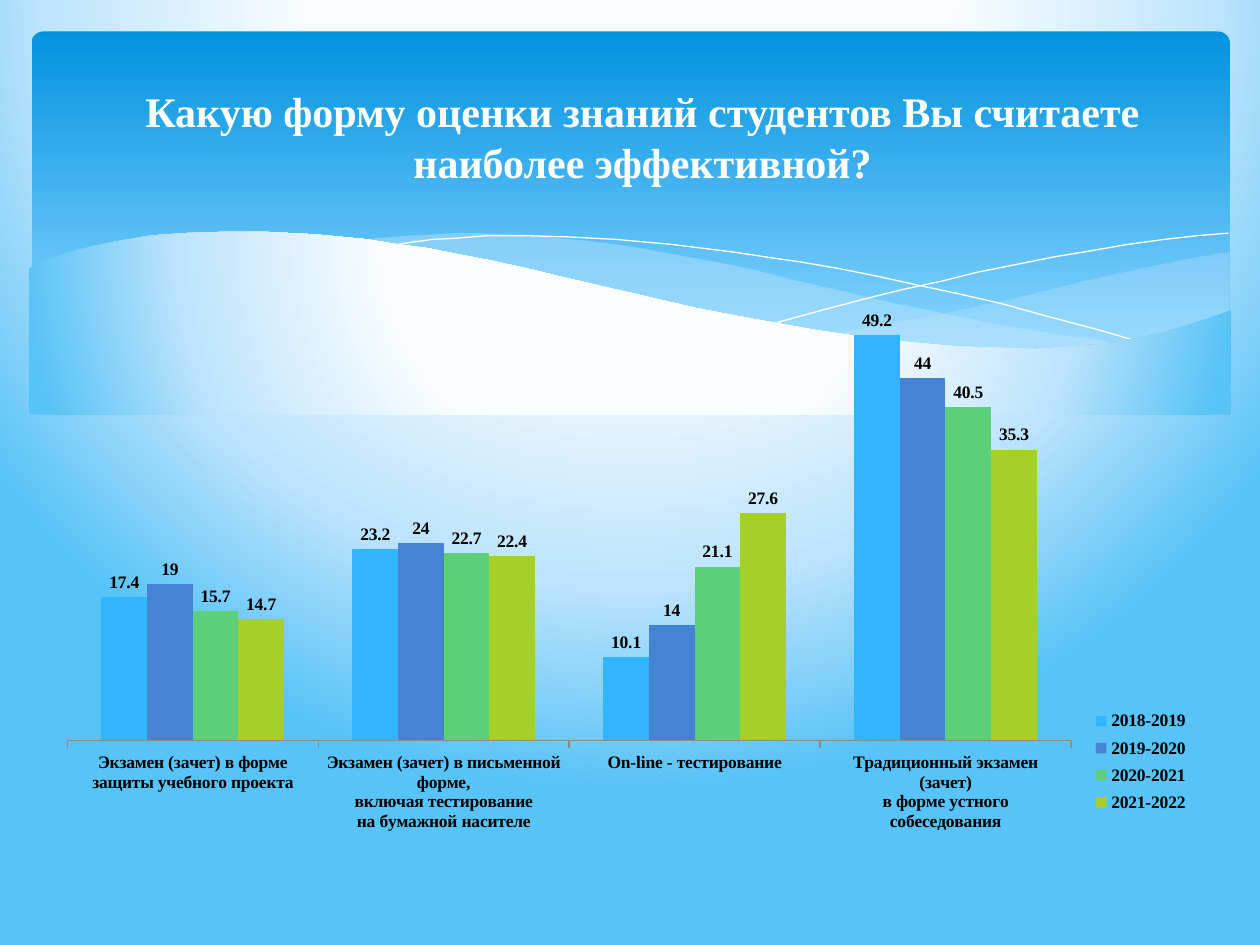
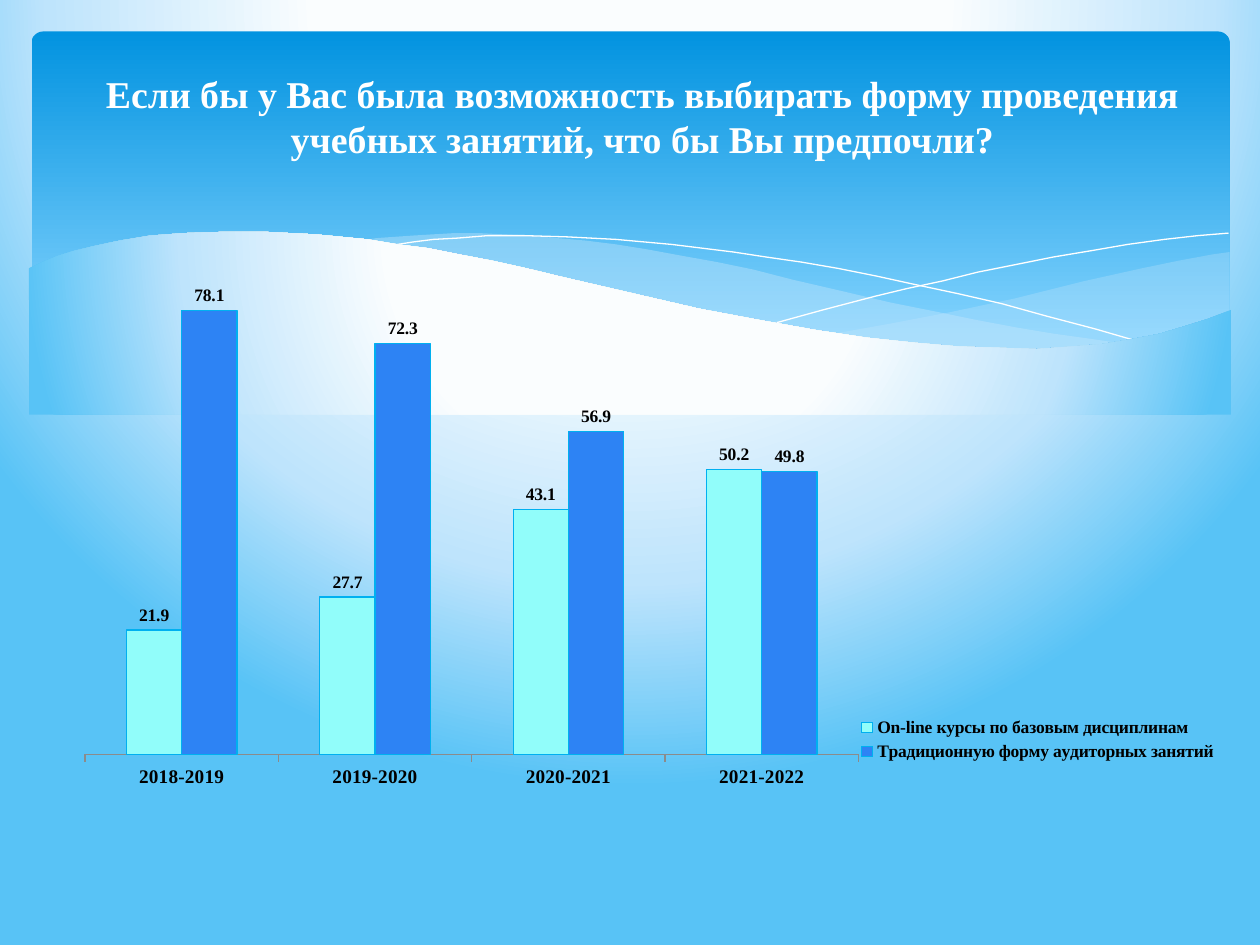
from pptx import Presentation
from pptx.chart.data import CategoryChartData
from pptx.dml.color import RGBColor
from pptx.enum.chart import XL_CHART_TYPE, XL_LABEL_POSITION, XL_LEGEND_POSITION, XL_TICK_MARK
from pptx.enum.shapes import MSO_SHAPE
from pptx.enum.text import MSO_ANCHOR, MSO_AUTO_SIZE, PP_ALIGN
from pptx.oxml import parse_xml
from pptx.oxml.ns import nsdecls, qn
from pptx.util import Inches, Pt

COLUMNS = XL_CHART_TYPE.COLUMN_CLUSTERED
ABOVE_BAR = XL_LABEL_POSITION.OUTSIDE_END
LEGEND_RIGHT = XL_LEGEND_POSITION.RIGHT
TICK_OUTSIDE = XL_TICK_MARK.OUTSIDE
ROUNDED = MSO_SHAPE.ROUNDED_RECTANGLE
MIDDLE = MSO_ANCHOR.MIDDLE
CENTER = PP_ALIGN.CENTER
NO_AUTOFIT = MSO_AUTO_SIZE.NONE

FONT = "Times New Roman"
WHITE = RGBColor(0xFF, 0xFF, 0xFF)
BLACK = RGBColor(0x00, 0x00, 0x00)
AXIS_GRAY = RGBColor(0x8B, 0x8B, 0x8B)
VEIL_BLUE = RGBColor(0xC6, 0xE7, 0xFC)
OUTLINE_BLUE = RGBColor(0x00, 0xB0, 0xF0)
SKY_BLUE = RGBColor(0x31, 0xB6, 0xFD)
ROYAL_BLUE = RGBColor(0x45, 0x84, 0xD3)
GREEN = RGBColor(0x5B, 0xD0, 0x78)
LIME = RGBColor(0xA5, 0xD0, 0x28)
AQUA = RGBColor(0x91, 0xFD, 0xFA)
BRIGHT_BLUE = RGBColor(0x2D, 0x83, 0xF4)
GLOW_STOPS = [(40, RGBColor(0xFA, 0xFD, 0xFE)), (74, RGBColor(0xBE, 0xE4, 0xFC)),
              (100, RGBColor(0x58, 0xC3, 0xF6))]
BAND_STOPS = [(0, RGBColor(0x02, 0x93, 0xE0)), (90, RGBColor(0x83, 0xD3, 0xFE))]

GLOW = ('<a:path {} path="circle"><a:fillToRect l="20000" t="-40000" r="20000" b="140000"/>'
        '</a:path>')
DOWNWARD = '<a:lin {} ang="5400000" scaled="0"/>'

# Outlines in inches from the top left corner of the page
RIGHT_VEIL = [
    (9.76, 2), (9.62, 2.02), (9.35, 2.07), (9.06, 2.13), (8.61, 2.23), (8.05, 2.37),
    (7.53, 2.48), (7.06, 2.57), (6.61, 2.65), (6.91, 2.69), (7.19, 2.72), (7.45, 2.75),
    (7.69, 2.77), (8.03, 2.78), (8.35, 2.77), (8.63, 2.75), (8.89, 2.72), (9.13, 2.67),
    (9.35, 2.62), (9.49, 2.57), (9.63, 2.52), (9.76, 2.47)]
MIDDLE_VEIL = [
    (8.93, 2.73), (8.66, 2.69), (8.37, 2.65), (8.07, 2.6), (7.75, 2.54), (7.41, 2.47),
    (7.06, 2.4), (6.68, 2.31), (6.29, 2.22), (5.98, 2.14), (5.69, 2.08), (5.41, 2.03),
    (5.14, 1.98), (4.89, 1.94), (4.65, 1.91), (4.42, 1.89), (4.2, 1.87), (3.99, 1.86),
    (3.8, 1.85), (3.61, 1.85), (3.28, 1.87), (2.99, 1.89), (2.86, 1.91), (3.23, 1.96),
    (3.62, 2.03), (4.04, 2.11), (4.49, 2.22), (4.91, 2.32), (5.3, 2.4), (5.66, 2.48),
    (6.01, 2.55), (6.34, 2.61), (6.65, 2.66), (6.95, 2.7), (7.22, 2.74), (7.48, 2.76),
    (7.73, 2.77), (7.96, 2.78), (8.28, 2.78), (8.57, 2.77), (8.76, 2.75)]
FALLING_LINE = [
    (3.09, 1.95), (3.28, 1.92), (3.44, 1.9), (3.63, 1.89), (3.87, 1.87), (4.16, 1.87),
    (4.5, 1.88), (4.89, 1.9), (5.33, 1.94), (5.82, 2), (6.08, 2.04), (6.36, 2.08),
    (6.65, 2.13), (6.95, 2.19), (7.27, 2.26), (7.6, 2.33), (7.95, 2.41), (8.31, 2.51),
    (8.69, 2.61), (9.07, 2.72)]
RISING_LINE = [
    (6.13, 2.57), (6.53, 2.46), (6.95, 2.35), (7.2, 2.29), (7.48, 2.23), (7.76, 2.16),
    (8.06, 2.1), (8.36, 2.04), (8.66, 1.99), (8.95, 1.94), (9.24, 1.9), (9.51, 1.87),
    (9.75, 1.85)]
WAVE = [
    (9.77, 2.46), (9.59, 2.53), (9.4, 2.59), (9.2, 2.65), (8.99, 2.69), (8.75, 2.73),
    (8.5, 2.75), (8.23, 2.77), (7.93, 2.76), (7.61, 2.75), (7.26, 2.72), (6.88, 2.68),
    (6.48, 2.62), (6.03, 2.54), (5.55, 2.45), (5.03, 2.33), (4.47, 2.2), (4.18, 2.13),
    (3.91, 2.07), (3.65, 2.02), (3.4, 1.97), (3.16, 1.94), (2.92, 1.9), (2.71, 1.88),
    (2.5, 1.86), (2.3, 1.85), (2.11, 1.84), (1.77, 1.84), (1.46, 1.85), (1.19, 1.87),
    (0.95, 1.91), (0.76, 1.95), (0.59, 1.99), (0.46, 2.03), (0.36, 2.07), (0.23, 2.13),
    (0.23, 3.29), (9.77, 3.29)]


def inches(*lengths):
    return [Inches(length) for length in lengths]


def apply_gradient(fill, owner, stops, direction):
    """Give the first gradient inside owner the stops and the direction XML."""
    fill.gradient()
    gradient = owner.find(".//" + qn("a:gradFill"))
    for child in list(gradient):
        gradient.remove(child)
    marks = "".join(f'<a:gs pos="{percent * 1000}"><a:srgbClr val="{color}"/></a:gs>'
                    for percent, color in stops)
    gradient.append(parse_xml(f'<a:gsLst {nsdecls("a")}>{marks}</a:gsLst>'))
    gradient.append(parse_xml(direction.format(nsdecls("a"))))


def add_outline(page, points, close):
    first, *others = [tuple(inches(*point)) for point in points]
    builder = page.shapes.build_freeform(*first, scale=1.0)
    builder.add_line_segments(others, close=close)
    outline = builder.convert_to_shape()
    outline.shadow.inherit = False
    return outline


def add_veil(page, points, opacity):
    veil = add_outline(page, points, close=True)
    veil.fill.solid()
    veil.fill.fore_color.rgb = VEIL_BLUE
    veil.line.fill.background()
    color = veil.element.find(".//" + qn("a:srgbClr"))
    color.append(parse_xml(f'<a:alpha {nsdecls("a")} val="{opacity * 1000}"/>'))
    return veil


def add_hairline(page, points):
    hairline = add_outline(page, points, close=False)
    hairline.fill.background()
    hairline.line.color.rgb = WHITE
    hairline.line.width = Pt(0)
    return hairline


def add_band(page):
    band = page.shapes.add_shape(ROUNDED, *inches(0.25, 0.25, 9.51, 2.7))
    band.adjustments[0] = 0.034
    band.shadow.inherit = False
    apply_gradient(band.fill, band.element, BAND_STOPS, DOWNWARD)
    band.line.fill.background()
    return band


def add_wave(page):
    wave = add_outline(page, WAVE, close=True)
    apply_gradient(wave.fill, wave.element, GLOW_STOPS, GLOW)
    wave.line.fill.background()
    return wave


def decorate_layout(layout, page):
    """Draw the shared scenery on page, then hand it to the layout behind its placeholders."""
    apply_gradient(layout.background.fill, layout.element, GLOW_STOPS, GLOW)
    scenery = [add_band(page), add_veil(page, RIGHT_VEIL, 29), add_veil(page, MIDDLE_VEIL, 40),
               add_hairline(page, FALLING_LINE), add_hairline(page, RISING_LINE),
               add_wave(page)]
    for depth, shape in enumerate(scenery, start=2):
        layout.shapes.element.insert(depth, shape.element)


def set_title(page, text, top, size):
    title = page.shapes.title
    title.left, title.top, title.width, title.height = inches(0.35, top, 9.5, 1.12)
    frame = title.text_frame
    frame.text = text
    frame.word_wrap = True
    frame.auto_size = NO_AUTOFIT
    frame.vertical_anchor = MIDDLE
    para = frame.paragraphs[0]
    para.alignment = CENTER
    set_font(para.runs[0].font, size, WHITE)


def set_font(font, size, color=BLACK):
    font.name = FONT
    font.size = Pt(size)
    font.bold = True
    font.color.rgb = color


def place_part(part, index, box, inner=False):
    """Fix a chart part at box, given as fractions of the chart's size."""
    for old in part.findall(qn("c:layout")):
        part.remove(old)
    target = '<c:layoutTarget val="inner"/>' if inner else ""
    modes = '<c:xMode val="edge"/><c:yMode val="edge"/>'
    sizes = "".join(f'<c:{name} val="{value}"/>' for name, value in zip("xywh", box))
    part.insert(index, parse_xml(f'<c:layout {nsdecls("c")}><c:manualLayout>{target}{modes}'
                                 f'{sizes}</c:manualLayout></c:layout>'))


def add_column_chart(page, box, categories, series, plot_box, legend_box, top_value,
                     axis_size=10, outline=None):
    data = CategoryChartData()
    data.categories = categories
    for name, values, _ in series:
        data.add_series(name, values)
    chart = page.shapes.add_chart(COLUMNS, *inches(*box), data).chart
    set_font(chart.font, 10)
    chart.has_title = False

    chart.has_legend = True
    chart.legend.position = LEGEND_RIGHT
    chart.legend.include_in_layout = False
    set_font(chart.legend.font, 10)

    chart.value_axis.minimum_scale = 0
    chart.value_axis.maximum_scale = top_value
    chart.value_axis.has_major_gridlines = False
    chart.value_axis.visible = False
    axis = chart.category_axis
    axis.major_tick_mark = TICK_OUTSIDE
    axis.format.line.color.rgb = AXIS_GRAY
    set_font(axis.tick_labels.font, axis_size)

    plot = chart.plots[0]
    plot.gap_width = 150
    plot.overlap = 0
    plot.vary_by_categories = False
    for bars, (_, _, color) in zip(plot.series, series):
        bars.format.fill.solid()
        bars.format.fill.fore_color.rgb = color
        if outline:
            bars.format.line.color.rgb = outline
            bars.format.line.width = Pt(0.75)
        labels = bars.data_labels
        labels.show_value = True
        labels.position = ABOVE_BAR
        set_font(labels.font, 10)

    place_part(chart.element.find(".//" + qn("c:plotArea")), 0, plot_box, inner=True)
    place_part(chart.element.find(".//" + qn("c:legend")), 1, legend_box)


def build_assessment_slide(page):
    set_title(page, "Какую форму оценки знаний студентов Вы считаете наиболее эффективной?",
              top=0.52, size=24)
    add_column_chart(
        page, (0.35, 1.86, 9.21, 4.84),
        ["Экзамен (зачет) в форме\nзащиты учебного проекта",
         "Экзамен (зачет) в письменной форме,\nвключая тестирование\nна бумажной насителе",
         "On-line - тестирование",
         "Традиционный экзамен (зачет)\nв форме устного собеседования"],
        [("2018-2019", (17.4, 23.2, 10.1, 49.2), SKY_BLUE),
         ("2019-2020", (19, 24, 14, 44), ROYAL_BLUE),
         ("2020-2021", (15.7, 22.7, 21.1, 40.5), GREEN),
         ("2021-2022", (14.7, 22.4, 27.6, 35.3), LIME)],
        plot_box=(0.02, 0.02, 0.865, 0.81), legend_box=(0.9, 0.77, 0.09, 0.19), top_value=60)


def build_preference_slide(page):
    set_title(page, "Если бы у Вас была возможность выбирать форму проведения учебных занятий, "
              "что бы Вы предпочли?", top=0.36, size=21.6)
    add_column_chart(
        page, (0.67, 1.78, 9.06, 4.57),
        ["2018-2019", "2019-2020", "2020-2021", "2021-2022"],
        [("On-line курсы по базовым дисциплинам", (21.9, 27.7, 43.1, 50.2), AQUA),
         ("Традиционную форму аудиторных занятий", (78.1, 72.3, 56.9, 49.8), BRIGHT_BLUE)],
        plot_box=(0, 0.033, 0.678, 0.888), legend_box=(0.675, 0.85, 0.32, 0.09), top_value=90,
        axis_size=11, outline=OUTLINE_BLUE)


def main():
    deck = Presentation()
    deck.slide_width, deck.slide_height = inches(10, 7.5)
    layout = deck.slide_layouts.get_by_name("Title Only")
    pages = [deck.slides.add_slide(layout) for _ in range(2)]
    decorate_layout(layout, pages[0])
    build_assessment_slide(pages[0])
    build_preference_slide(pages[1])
    deck.save("out.pptx")


if __name__ == "__main__":
    main()
